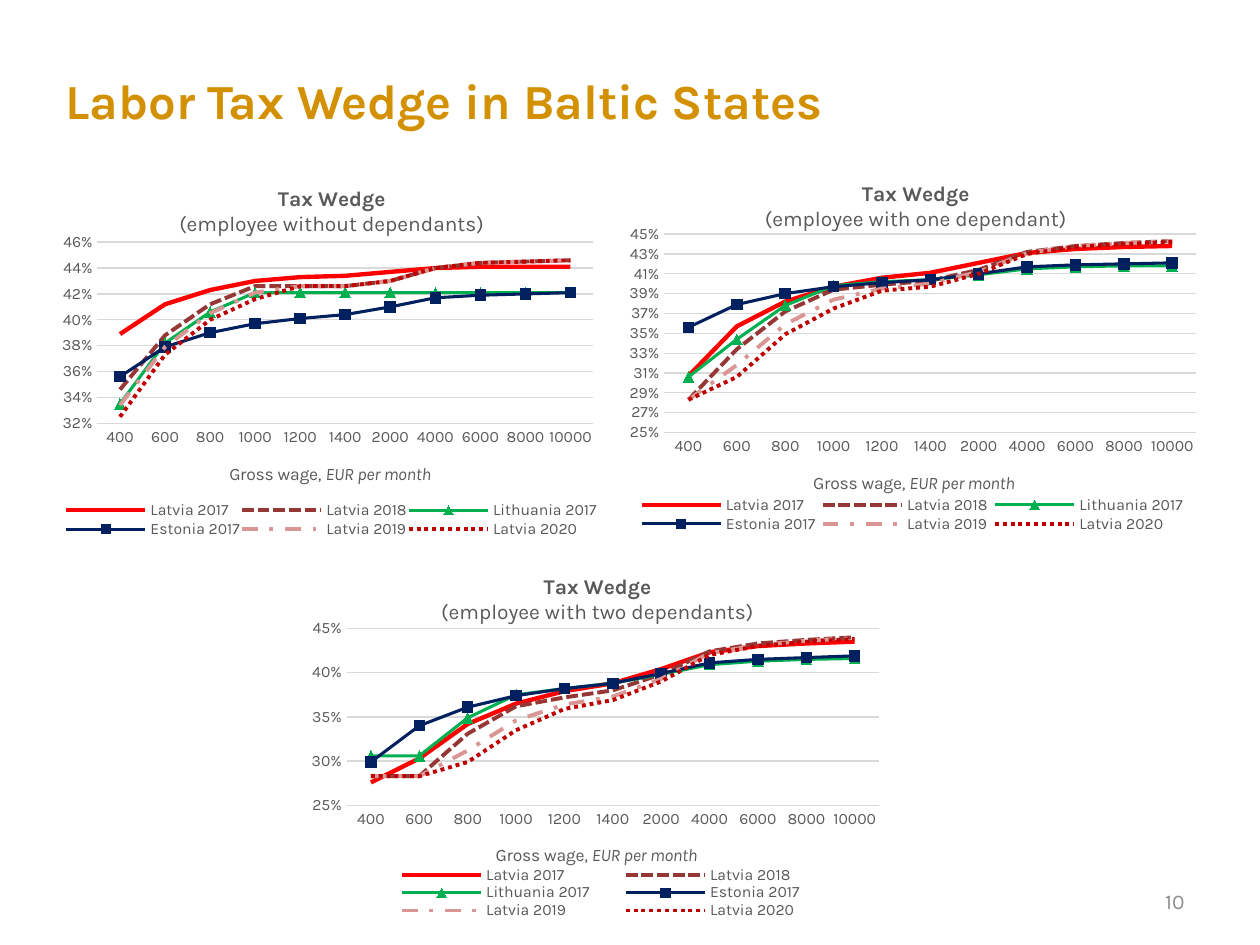
import pptx
import pptx.util
import pptx.chart.data
import pptx.dml.color
import pptx.enum.chart
import pptx.enum.dml
import pptx.enum.text
import pptx.oxml
import pptx.oxml.ns
from dataclasses import dataclass
from typing import Optional

Inches = pptx.util.Inches
Pt = pptx.util.Pt
Dash = pptx.enum.dml.MSO_LINE
Mark = pptx.enum.chart.XL_MARKER_STYLE
FACE = "Karla"
GRAY = "595959"
PALE = "D9D9D9"
WAGES = [*range(400, 1401, 200), *range(2000, 10001, 2000)]


@dataclass
class Tax:
    boss: float
    staff: float
    rate: float
    most: float
    least: float
    start: float
    end: float
    kids: tuple
    extra: float = 0
    gross: bool = False

    def wedge(self, wage: float, count: int) -> float:
        share = min(1, max(0, (self.end - wage) / (self.end - self.start)))
        free = self.least + (self.most - self.least) * share + self.kids[count]
        pay = wage * (1 - self.staff)
        base = max(0, (wage if self.gross else pay) - free)
        due = self.rate * base + self.extra * max(0, wage - 1667)
        return round(1 - (pay - due) / (wage * (1 + self.boss)), 3)


@dataclass
class Curve:
    name: str
    color: str
    width: float
    tax: Tax
    dash: Optional[Dash] = None
    mark: Mark = Mark.NONE


@dataclass
class Panel:
    box: tuple
    who: str
    count: int
    low: float
    high: float
    step: float
    plot: tuple
    key: tuple
    head: tuple
    foot: tuple


def reform(free: float, end: float) -> Tax:
    return Tax(0.2409, 0.11, 0.2, free, 0, 440, end, (0, free, 2 * free), 0.03)


CURVES = [
    Curve("Latvia 2017", "FF0000", 2.5,
          Tax(0.2359, 0.105, 0.23, 115, 60, 400, 1100, (0, 175, 350))),
    Curve("Latvia 2018", "953735", 2.25, reform(200, 1000), Dash.SQUARE_DOT),
    Curve("Lithuania 2017", "00B050", 1.75,
          Tax(0.3117, 0.09, 0.15, 310, 0, 380, 1000, (0, 200, 400), gross=True),
          mark=Mark.TRIANGLE),
    Curve("Estonia 2017", "002060", 1.75,
          Tax(0.338, 0.036, 0.2, 180, 180, 0, 1, (0, 0, 154)), mark=Mark.SQUARE),
    Curve("Latvia 2019", "D99694", 2.25, reform(230, 1100), Dash.DASH_DOT),
    Curve("Latvia 2020", "C00000", 2.25, reform(250, 1200), Dash.ROUND_DOT),
]

PANELS = [
    Panel((4.84, 1.24, 4.8, 3.09), "(employee with one dependant)", 1,
          0.25, 0.45, 0.02, (0.09, 0.2, 0.88, 0.51),
          (0.04, 0.87, 0.92, 0.1), (0.25, 0.05), (0.33, 0.8)),
    Panel((2.32, 4.36, 4.8, 2.99), "(employee with two dependants)", 2,
          0.25, 0.45, 0.05, (0.09, 0.21, 0.88, 0.47),
          (0.13, 0.84, 0.76, 0.14), (0.24, 0.05), (0.33, 0.77)),
    Panel((0.42, 1.28, 4.42, 3.06), "(employee without dependants)", 0,
          0.32, 0.46, 0.02, (0.08, 0.21, 0.89, 0.47),
          (0.02, 0.88, 0.96, 0.1), (0.22, 0.05), (0.31, 0.77)),
]


def tint(target, color: str) -> None:
    target.rgb = pptx.dml.color.RGBColor.from_string(color)


def paint(fill, color: str) -> None:
    fill.solid()
    tint(fill.fore_color, color)


def set_font(font, size: float, color: str = GRAY, bold: bool = False,
             slant: bool = False) -> None:
    font.name, font.size = FACE, Pt(size)
    font.bold, font.italic = bold, slant
    tint(font.color, color)


def set_line(line, color: str, width: float) -> None:
    tint(line.color, color)
    line.width = Pt(width)


def place(node, index: int, box: tuple, inner: bool = False) -> None:
    for old in node.findall(pptx.oxml.ns.qn("c:layout")):
        node.remove(old)
    target = '<c:layoutTarget val="inner"/>' if inner else ""
    modes = "".join(f'<c:{k}Mode val="edge"/>' for k in "xy")
    sizes = "".join(f'<c:{k} val="{v}"/>' for k, v in zip("xywh", box))
    node.insert(index, pptx.oxml.parse_xml(
        f'<c:layout {pptx.oxml.ns.nsdecls("c")}><c:manualLayout>'
        f'{target}{modes}{sizes}</c:manualLayout></c:layout>'))


def add_titles(chart, panel: Panel) -> None:
    head = chart.chart_title
    frame = head.text_frame
    frame.text = f"Tax Wedge\n{panel.who}"
    for para, bold in zip(frame.paragraphs, (True, False)):
        set_font(para.font, 12, bold=bold)
        set_font(para.runs[0].font, 12, bold=bold)
    place(head._element, 1, panel.head)
    foot = chart.category_axis.axis_title
    para = foot.text_frame.paragraphs[0]
    set_font(para.font, 10)
    for text, slant in (("Gross wage, ", False), ("EUR per month", True)):
        run = para.add_run()
        run.text = text
        set_font(run.font, 10, slant=slant)
    place(foot._element, 1, panel.foot)


def set_axes(chart, panel: Panel) -> None:
    wage, rate = chart.category_axis, chart.value_axis
    for axis in (wage, rate):
        axis.major_tick_mark = pptx.enum.chart.XL_TICK_MARK.NONE
        axis.minor_tick_mark = pptx.enum.chart.XL_TICK_MARK.NONE
        set_font(axis.tick_labels.font, 9)
    set_line(wage.format.line, PALE, 0.75)
    rate.format.line.fill.background()
    set_line(rate.major_gridlines.format.line, PALE, 0.75)
    rate.minimum_scale, rate.maximum_scale = panel.low, panel.high
    rate.major_unit = panel.step
    rate.tick_labels.number_format = "0%"
    rate.tick_labels.number_format_is_linked = False


def set_series(series, curve: Curve) -> None:
    series.smooth = False
    line, mark = series.format.line, series.marker
    set_line(line, curve.color, curve.width)
    if curve.dash:
        line.dash_style = curve.dash
    mark.style = curve.mark
    if curve.mark != Mark.NONE:
        mark.size = 6
        paint(mark.format.fill, curve.color)
        set_line(mark.format.line, curve.color, 0.75)


def add_panel(slide, panel: Panel) -> None:
    data = pptx.chart.data.CategoryChartData(number_format="0.0%")
    data.categories = [str(wage) for wage in WAGES]
    for curve in CURVES:
        data.add_series(curve.name, [curve.tax.wedge(w, panel.count) for w in WAGES])
    kind = pptx.enum.chart.XL_CHART_TYPE.LINE_MARKERS
    chart = slide.shapes.add_chart(kind, *map(Inches, panel.box), data).chart
    set_font(chart.font, 10, "000000")
    chart.plots[0].vary_by_categories = False
    set_axes(chart, panel)
    add_titles(chart, panel)
    for series, curve in zip(chart.plots[0].series, CURVES):
        set_series(series, curve)
    chart.has_legend = True
    key = chart.legend
    key.position = pptx.enum.chart.XL_LEGEND_POSITION.BOTTOM
    key.include_in_layout = False
    set_font(key.font, 9)
    place(key._element, 1, panel.key)
    place(chart._chartSpace.chart.plotArea, 0, panel.plot, True)


def set_text(shape, text: str, align, size: float, color: str,
             bold: bool = False) -> None:
    frame = shape.text_frame
    frame.text = text
    frame.word_wrap = True
    frame.vertical_anchor = pptx.enum.text.MSO_ANCHOR.MIDDLE
    frame.paragraphs[0].alignment = align
    set_font(frame.paragraphs[0].runs[0].font, size, color, bold)


def main() -> None:
    deck = pptx.Presentation()
    deck.slide_width, deck.slide_height = Inches(10), Inches(7.5)
    slide = deck.slides.add_slide(deck.slide_layouts[5])
    side = pptx.enum.text.PP_ALIGN
    title = slide.shapes.title
    title.left, title.top = Inches(0.42), Inches(0.52)
    title.width, title.height = Inches(6.39), Inches(0.55)
    paint(title.fill, "FFFFFF")
    set_text(title, "Labor Tax Wedge in Baltic States", side.LEFT, 28, "D39001", True)
    page = slide.shapes.add_textbox(*map(Inches, (7.17, 6.95, 2.33, 0.4)))
    set_text(page, "10", side.RIGHT, 12, "8C8C8C")
    for panel in PANELS:
        add_panel(slide, panel)
    deck.save("out.pptx")


if __name__ == "__main__":
    main()
